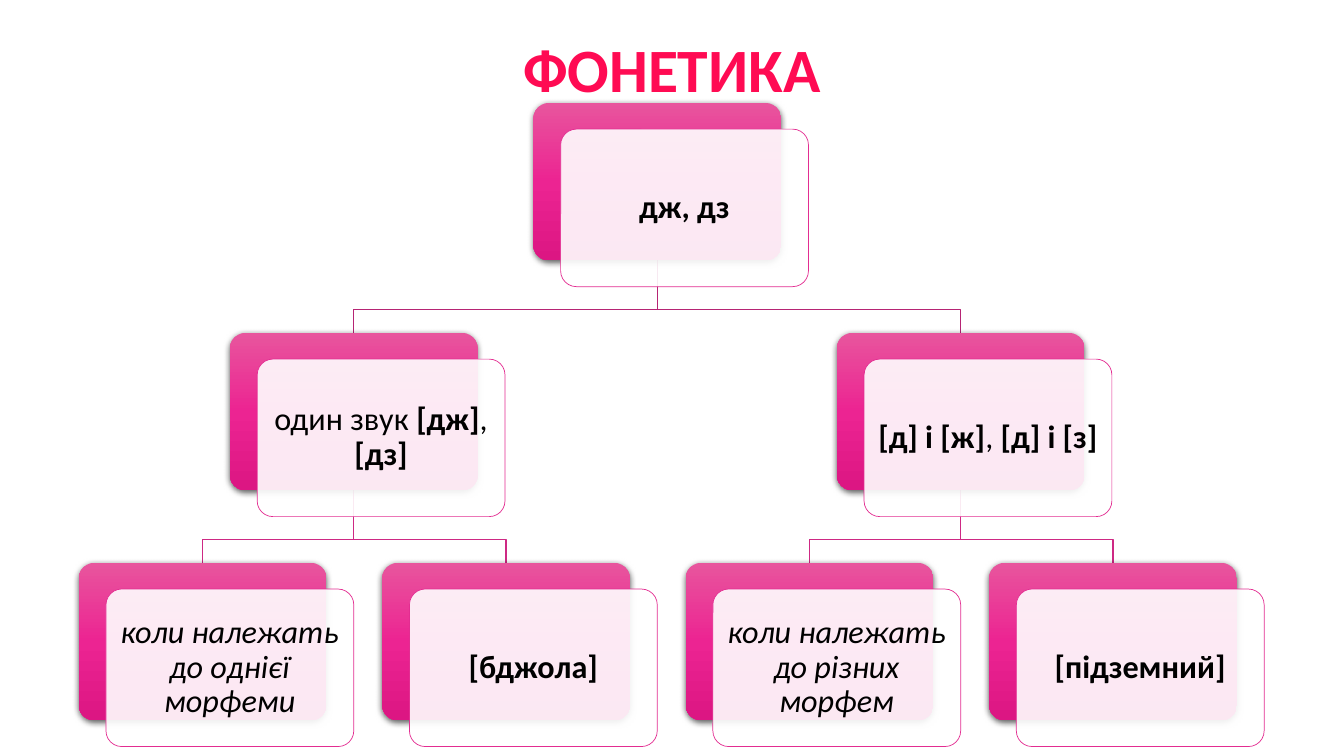
from dataclasses import dataclass

from lxml import etree
from pptx import Presentation
from pptx import util as u
from pptx.dml.color import RGBColor
from pptx.enum import shapes, text
from pptx.oxml import ns

PX = 9525


@dataclass(frozen=True)
class Theme:
    """Colours and type sizes of the slide."""
    font: str = "Calibri"
    title: str = "FF0B53"
    ink: str = "000000"
    paper: str = "FFFFFF"
    edge: str = "E32D91"
    links: tuple = ("B62474", "CE2984")
    blend: tuple = ((0, "E8559D"), (50, "EC2492"), (100, "DC1683"))
    head: int = 44
    body: int = 23


LOOK = Theme()
CARD_W, CARD_H = 236, 150
SHIFT_X, SHIFT_Y = 26, 25
STEP_X, STEP_Y = 289, 219
BEND = 47

TREE = ([("дж, дз", "b")], [
    ([("один звук ", ""), ("[дж]", "b"), (", ", ""), ("[дз]", "b")], [
        ([("коли належать до однієї морфеми", "i")], []),
        ([("[бджола]", "b")], []),
    ]),
    ([("[д] і [ж]", "b"), (", ", ""), ("[д] і [з]", "b")], [
        ([("коли належать до різних морфем", "i")], []),
        ([("[підземний]", "b")], []),
    ]),
])


def rgb(code):
    """Return a colour from its hex code."""
    return RGBColor.from_string(code)


def sub(node, tag, **attrs):
    """Add a drawing element under a node."""
    return etree.SubElement(node, ns.qn(tag), attrs)


def style(run, size, color, marks):
    """Format one run; marks holds b for bold and i for italic."""
    font = run.font
    font.name, font.size = LOOK.font, u.Pt(size)
    font.bold, font.italic = "b" in marks, "i" in marks
    font.color.rgb = rgb(color)


def add_title(slide, box, words):
    """Place the title in its box."""
    title = slide.shapes.title
    title.left, title.top, title.width, title.height = (v * PX for v in box)
    frame = title.text_frame
    frame.text = words
    frame.vertical_anchor = text.MSO_ANCHOR.MIDDLE
    para = frame.paragraphs[0]
    para.alignment, para.line_spacing = text.PP_ALIGN.CENTER, 0.9
    style(para.runs[0], LOOK.head, LOOK.title, "b")


def add_plate(slide, x, y):
    """Add a plain rounded plate of card size."""
    kind = shapes.MSO_SHAPE.ROUNDED_RECTANGLE
    plate = slide.shapes.add_shape(kind, x * PX, y * PX, CARD_W * PX, CARD_H * PX)
    plate.adjustments[0] = 0.1
    plate.shadow.inherit = False
    return plate


def add_back(slide, x, y):
    """Add the shaded plate behind a card."""
    back = add_plate(slide, x, y)
    back.line.fill.background()
    back.fill.gradient()
    back.fill.gradient_angle = 270
    props = back._element.spPr
    stops = props.find(".//" + ns.qn("a:gsLst"))
    for old in list(stops):
        stops.remove(old)
    for pos, code in LOOK.blend:
        sub(sub(stops, "a:gs", pos=str(pos * 1000)), "a:srgbClr", val=code)
    shade = sub(props.find(ns.qn("a:effectLst")), "a:outerShdw", blurRad="57150",
                dist="19050", dir="5400000", algn="ctr", rotWithShape="0")
    sub(sub(shade, "a:srgbClr", val=LOOK.ink), "a:alpha", val="63000")


def add_card(slide, x, y, parts):
    """Add a shaded plate and the see-through card that holds the words."""
    add_back(slide, x, y)
    card = add_plate(slide, x + SHIFT_X, y + SHIFT_Y)
    card.fill.solid()
    card.fill.fore_color.rgb = rgb(LOOK.paper)
    tint = card._element.spPr.find(ns.qn("a:solidFill"))[0]
    sub(tint, "a:alpha", val="90000")
    card.line.color.rgb = rgb(LOOK.edge)
    card.line.width = u.Pt(0.5)
    frame = card.text_frame
    frame.word_wrap = True
    frame.vertical_anchor = text.MSO_ANCHOR.MIDDLE
    frame.margin_left = frame.margin_right = 9 * PX
    frame.margin_top = frame.margin_bottom = 9 * PX
    para = frame.paragraphs[0]
    para.alignment, para.line_spacing = text.PP_ALIGN.CENTER, 0.9
    for words, marks in parts:
        run = para.add_run()
        run.text = words
        style(run, LOOK.body, LOOK.ink, marks)


def add_link(slide, start, end, color):
    """Draw the bent line from a card down to its child."""
    (x, y), (to_x, to_y) = start, end
    pen = slide.shapes.build_freeform(x, y, scale=PX)
    bends = [(x, y + BEND), (to_x, y + BEND), (to_x, to_y)]
    pen.add_line_segments(bends, close=False)
    link = pen.convert_to_shape()
    link.shadow.inherit = False
    link.fill.background()
    link.line.color.rgb = rgb(color)
    link.line.width = u.Pt(1)


def count(node):
    """Count the leaves under a node."""
    return sum(map(count, node[1])) or 1


def lay_out(node, x, y, level=0):
    """Yield each node's parts, spot, level and child spots, centred over leaves."""
    spot = x + (count(node) - 1) * STEP_X // 2, y
    kids, left = [], x
    for kid in node[1]:
        kids.append(list(lay_out(kid, left, y + STEP_Y, level + 1)))
        left += count(kid) * STEP_X
    yield node[0], spot, level, [kid[0][1] for kid in kids]
    for kid in kids:
        yield from kid


def add_tree(slide, x, y, tree):
    """Draw the tree from its top left corner, links behind cards."""
    nodes = list(lay_out(tree, x, y))
    half = CARD_W // 2
    for _, (left, top), level, kids in nodes:
        for kid_x, kid_y in kids:
            add_link(slide, (left + half, top + CARD_H), (kid_x + half, kid_y),
                     LOOK.links[level])
    for parts, (left, top), _, _ in nodes:
        add_card(slide, left, top, parts)


def main():
    """Build and save the slide."""
    deck = Presentation()
    deck.slide_width, deck.slide_height = 1280 * PX, 720 * PX
    slide = deck.slides.add_slide(deck.slide_layouts[5])
    add_title(slide, (88, 0, 1104, 139), "ФОНЕТИКА")
    add_tree(slide, 75, 98, TREE)
    deck.save("out.pptx")


if __name__ == "__main__":
    main()
